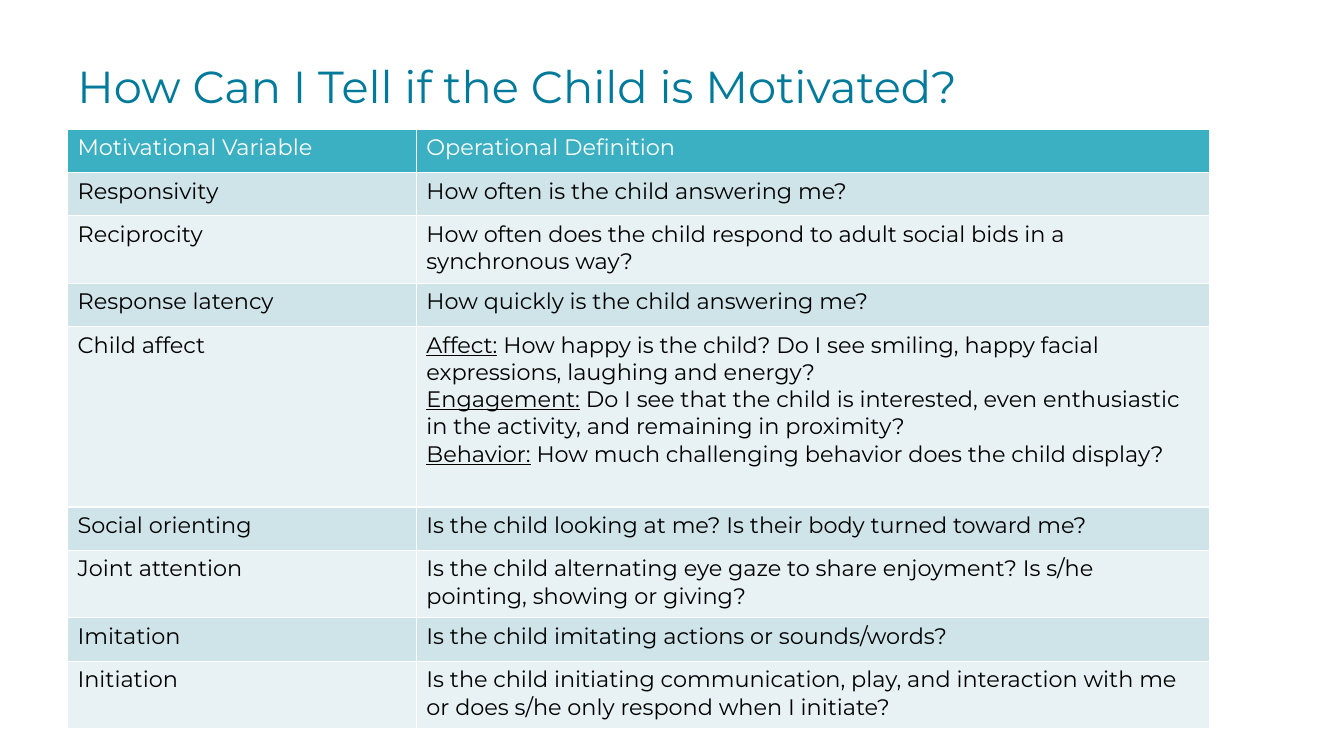
from pptx import Presentation
from pptx import util as u
from pptx.dml.color import RGBColor
from pptx.enum import text

PX = u.Inches(1) // 100
FONT = "Montserrat"
TITLE_BLUE = RGBColor(0x00, 0x7A, 0x9B)
HEADER_TEAL = RGBColor(0x3B, 0xB0, 0xC2)
BAND_DARK = RGBColor(0xCE, 0xE4, 0xE9)
BAND_LIGHT = RGBColor(0xE8, 0xF2, 0xF4)
WHITE = RGBColor(0xFF, 0xFF, 0xFF)
BLACK = RGBColor(0x00, 0x00, 0x00)

COLUMN_WIDTHS = [346, 787]
ROWS = [
    (43, "Motivational Variable", [("", "Operational Definition")]),
    (43, "Responsivity", [("", "How often is the child answering me?")]),
    (67, "Reciprocity", [("", "How often does the child respond to adult social bids in a synchronous way?")]),
    (43, "Response latency", [("", "How quickly is the child answering me?")]),
    (179, "Child affect", [
        ("Affect:", " How happy is the child? Do I see smiling, happy facial expressions, laughing and energy?"),
        ("Engagement:", " Do I see that the child is interested, even enthusiastic in the activity, and remaining in proximity?"),
        ("Behavior:", " How much challenging behavior does the child display?"),
    ]),
    (43, "Social orienting", [("", "Is the child looking at me? Is their body turned toward me?")]),
    (67, "Joint attention", [("", "Is the child alternating eye gaze to share enjoyment? Is s/he pointing, showing or giving?")]),
    (43, "Imitation", [("", "Is the child imitating actions or sounds/words?")]),
    (67, "Initiation", [("", "Is the child initiating communication, play, and interaction with me or does s/he only respond when I initiate?")]),
]


def add_run(paragraph, words, color, **values):
    run = paragraph.add_run()
    run.text = words
    for name, value in {"name": FONT, "bold": False, **values}.items():
        setattr(run.font, name, value)
    run.font.color.rgb = color


presentation = Presentation()
presentation.slide_width = 1333 * PX
presentation.slide_height = 750 * PX
slide = presentation.slides.add_slide(presentation.slide_layouts[6])

title = slide.shapes.add_textbox(67 * PX, 53 * PX, 913 * PX, 64 * PX)
title.text_frame.word_wrap = False
title.text_frame.auto_size = text.MSO_AUTO_SIZE.SHAPE_TO_FIT_TEXT
add_run(title.text_frame.paragraphs[0], "How Can I Tell if the Child is Motivated?", TITLE_BLUE, size=u.Pt(32))

table = slide.shapes.add_table(
    len(ROWS), len(COLUMN_WIDTHS), 67 * PX, 128 * PX,
    sum(COLUMN_WIDTHS) * PX, sum(row[0] for row in ROWS) * PX,
).table
for column, width in zip(table.columns, COLUMN_WIDTHS):
    column.width = width * PX

for index, (height, variable, definition) in enumerate(ROWS):
    table.rows[index].height = height * PX
    if index == 0:
        fill, color = HEADER_TEAL, WHITE
    else:
        fill, color = (BAND_DARK if index % 2 else BAND_LIGHT), BLACK
    for cell, lines in zip(table.rows[index].cells, ([("", variable)], definition)):
        cell.fill.solid()
        cell.fill.fore_color.rgb = fill
        for number, (label, words) in enumerate(lines):
            frame = cell.text_frame
            paragraph = frame.add_paragraph() if number else frame.paragraphs[0]
            if label:
                add_run(paragraph, label, color, size=u.Pt(16), underline=True)
            add_run(paragraph, words, color, size=u.Pt(16))

presentation.save("out.pptx")
